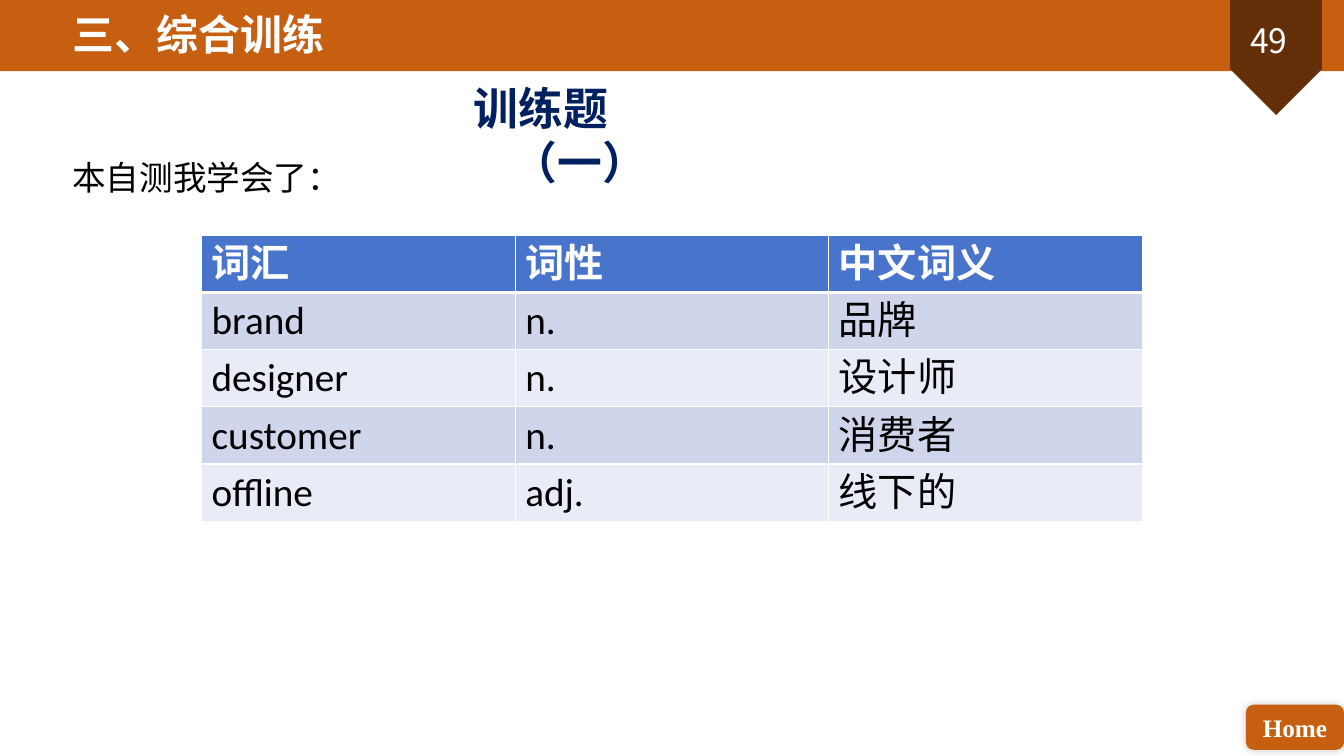
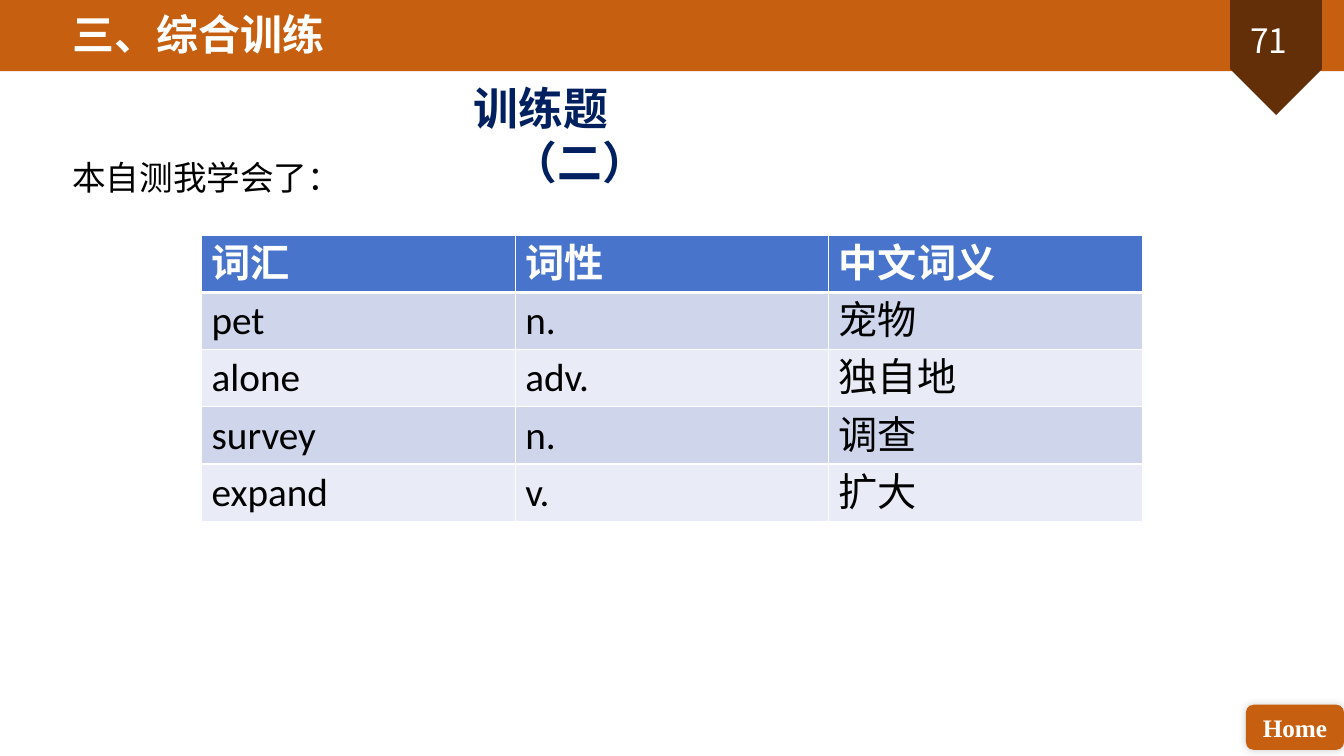
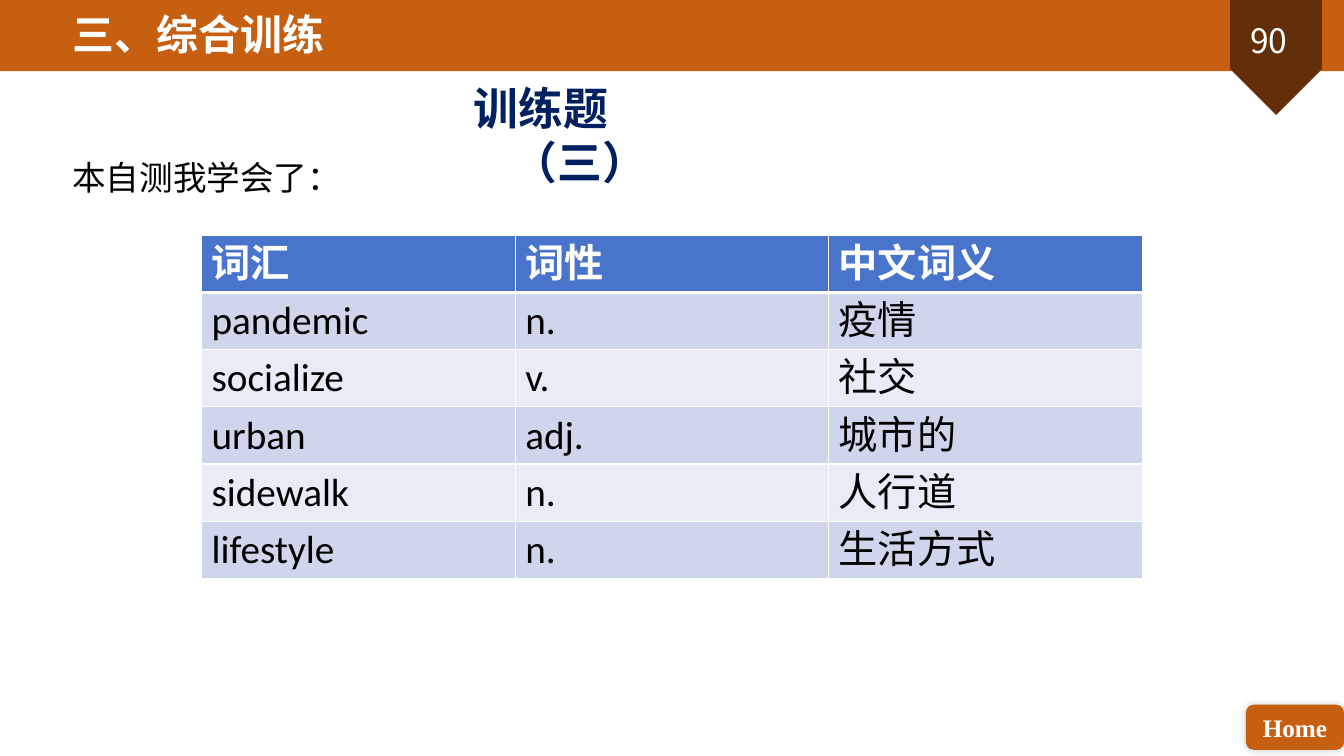
from dataclasses import dataclass

from lxml.etree import SubElement
from pptx import Presentation
from pptx.dml.color import RGBColor
from pptx.enum.lang import MSO_LANGUAGE_ID
from pptx.enum.shapes import MSO_SHAPE
from pptx.enum.text import MSO_ANCHOR, PP_ALIGN
from pptx.oxml.ns import qn
from pptx.util import Pt


@dataclass(frozen=True)
class Theme:
    orange: str = "C65F10"
    brown: str = "632F08"
    navy: str = "002060"
    white: str = "FFFFFF"
    black: str = "000000"
    header_fill: str = "4874CB"
    row_fills: tuple = ("CFD6EC", "E9EBF6")
    latin: str = "Calibri"
    cjk: str = "Noto Sans CJK SC"
    button_font: str = "Times New Roman"
    title_size: int = 30
    heading_size: int = 32
    table_size: int = 28
    body_size: int = 24
    button_size: int = 18


@dataclass(frozen=True)
class Box:
    left: float
    top: float
    width: float
    height: float

    def inner(self, left, top, width, height):
        return Box(self.left + left, self.top + top, width, height)

    def lengths(self):
        return [Pt(v) for v in (self.left, self.top, self.width, self.height)]


THEME = Theme()
PAGE = Box(0, 0, 960, 540)
COLUMNS = ("词汇", "词性", "中文词义")
ROW_HEIGHT = 40.7
EXERCISES = [
    (49, "训练题（一）", [
        ("brand", "n.", "品牌"),
        ("designer", "n.", "设计师"),
        ("customer", "n.", "消费者"),
        ("offline", "adj.", "线下的"),
    ]),
    (71, "训练题（二）", [
        ("pet", "n.", "宠物"),
        ("alone", "adv.", "独自地"),
        ("survey", "n.", "调查"),
        ("expand", "v.", "扩大"),
    ]),
    (90, "训练题（三）", [
        ("pandemic", "n.", "疫情"),
        ("socialize", "v.", "社交"),
        ("urban", "adj.", "城市的"),
        ("sidewalk", "n.", "人行道"),
        ("lifestyle", "n.", "生活方式"),
    ]),
]


def add_run(paragraph, text, size, color, font=THEME.latin, bold=False):
    run = paragraph.add_run()
    run.text = text
    run.font.size = Pt(size)
    run.font.bold = bold
    run.font.name = font
    run.font.color.rgb = RGBColor.from_string(color)
    run.font.language_id = MSO_LANGUAGE_ID.SIMPLIFIED_CHINESE
    # The Latin face sets the line height for Chinese text too.
    SubElement(run.font._element, qn("a:ea"), typeface=THEME.latin)


def add_block(slide, kind, box, color):
    block = slide.shapes.add_shape(kind, *box.lengths())
    block.shadow.inherit = False
    block.fill.solid()
    block.fill.fore_color.rgb = RGBColor.from_string(color)
    block.line.fill.background()
    return block


def add_text(slide, box, text, size, color, font=THEME.latin, bold=False):
    """Add a wrapping one-paragraph text box and return its paragraph."""
    frame = slide.shapes.add_textbox(*box.lengths()).text_frame
    frame.word_wrap = True
    paragraph = frame.paragraphs[0]
    add_run(paragraph, text, size, color, font, bold)
    return paragraph


def add_header(slide, box, number):
    add_block(slide, MSO_SHAPE.RECTANGLE, box, THEME.orange)
    pennant = add_block(slide, MSO_SHAPE.PENTAGON,
                        box.inner(870.5, 8.4, 82, 65.5), THEME.brown)
    pennant.rotation = 90
    page_number = add_text(slide, box.inner(871, 10.8, 70.6, 36), str(number),
                           THEME.body_size, THEME.white, THEME.cjk)
    page_number.alignment = PP_ALIGN.CENTER
    title = add_text(slide, box.inner(44.6, 2.2, 226, 43.2), "三、综合训练",
                     THEME.title_size, THEME.white, bold=True)
    title.alignment = PP_ALIGN.JUSTIFY


def add_home_button(slide, box):
    button = add_block(slide, MSO_SHAPE.ROUNDED_RECTANGLE, box, THEME.orange)
    effects = button._element.spPr.find(qn("a:effectLst"))
    glow = SubElement(effects, qn("a:outerShdw"), blurRad=str(Pt(6)),
                      dist="0", dir="18900000", rotWithShape="0")
    tint = SubElement(glow, qn("a:srgbClr"), val=THEME.black)
    SubElement(tint, qn("a:alpha"), val="20000")
    frame = button.text_frame
    frame.vertical_anchor = MSO_ANCHOR.MIDDLE
    label = frame.paragraphs[0]
    label.alignment = PP_ALIGN.CENTER
    add_run(label, "Home", THEME.button_size, THEME.white,
            THEME.button_font, bold=True)


def add_introduction(slide, box, heading):
    heading_line = add_text(slide, box.inner(286.6, 0, 188, 46), heading,
                            THEME.heading_size, THEME.navy, THEME.cjk, bold=True)
    properties = heading_line._p.get_or_add_pPr()
    properties.set("marL", str(Pt(28)))
    properties.set("indent", str(Pt(-36)))
    lead = add_text(slide, box.inner(0, 46, box.width, 83), "本自测我学会了：",
                    THEME.body_size, THEME.black, THEME.cjk)
    lead.line_spacing = 1.3


def set_borders(cell, bottom):
    properties = cell._tc.get_or_add_tcPr()
    for side, width in (("L", 1), ("R", 1), ("T", 1), ("B", bottom)):
        line = SubElement(properties, qn(f"a:ln{side}"), w=str(Pt(width)))
        fill = SubElement(line, qn("a:solidFill"))
        SubElement(fill, qn("a:srgbClr"), val=THEME.white)


def add_vocabulary(slide, box, words):
    rows = [COLUMNS, *words]
    table = slide.shapes.add_table(len(rows), len(COLUMNS), *box.lengths()).table
    for r, entries in enumerate(rows):
        is_header = r == 0
        table.rows[r].height = Pt(ROW_HEIGHT)
        fill = THEME.header_fill if is_header else THEME.row_fills[(r - 1) % 2]
        for c, entry in enumerate(entries):
            cell = table.cell(r, c)
            set_borders(cell, 3 if is_header else 1)
            cell.fill.solid()
            cell.fill.fore_color.rgb = RGBColor.from_string(fill)
            add_run(cell.text_frame.paragraphs[0], entry, THEME.table_size,
                    THEME.white if is_header else THEME.black, bold=is_header)


def add_exercise_slide(deck, number, heading, words):
    slide = deck.slides.add_slide(deck.slide_layouts[6])
    add_header(slide, PAGE.inner(0, 0, PAGE.width, 50.8), number)
    add_home_button(slide, PAGE.inner(890, 503.4, 70, 32.2))
    add_introduction(slide, PAGE.inner(44.6, 54, 783.4, 129), heading)
    add_vocabulary(slide, PAGE.inner(144, 168, 672, ROW_HEIGHT * (len(words) + 1)),
                   words)


def main():
    deck = Presentation()
    deck.slide_width, deck.slide_height = Pt(PAGE.width), Pt(PAGE.height)
    for exercise in EXERCISES:
        add_exercise_slide(deck, *exercise)
    deck.save("out.pptx")


if __name__ == "__main__":
    main()
